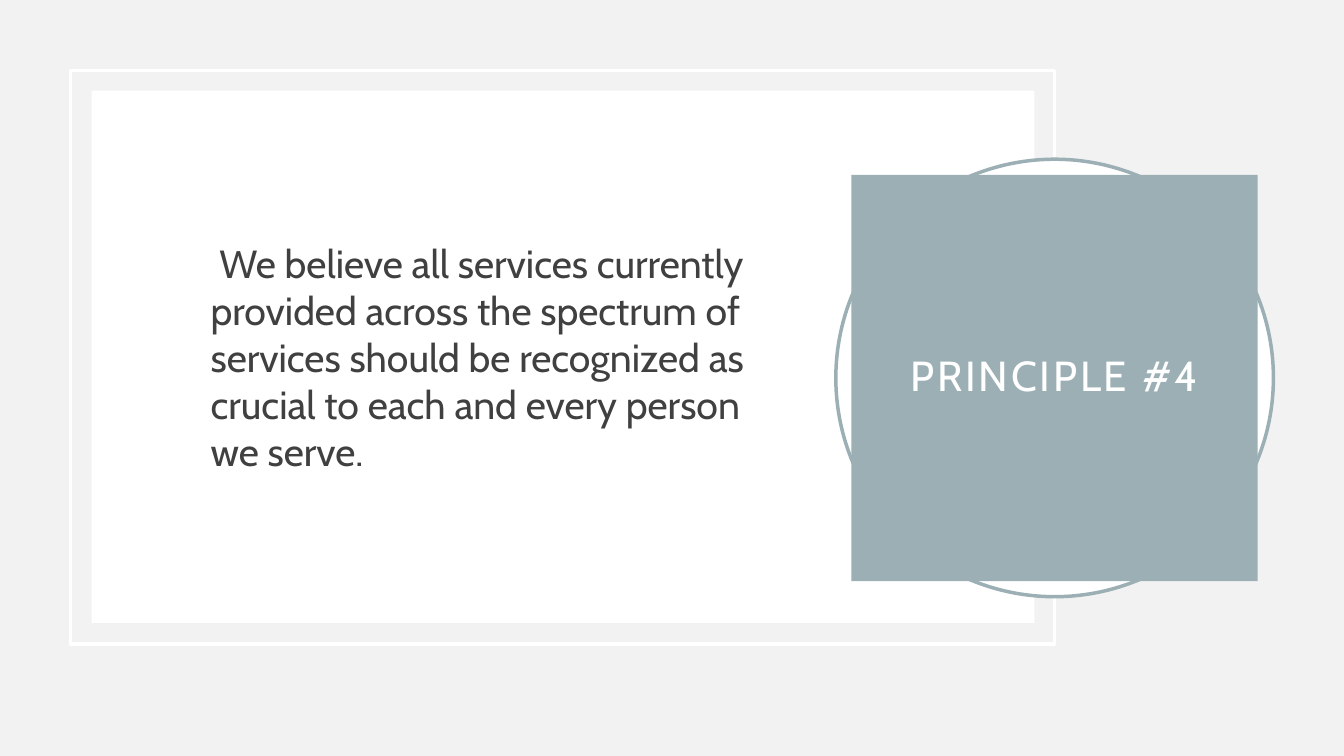
from pptx import Presentation
from pptx.dml.color import RGBColor
from pptx.enum.shapes import MSO_SHAPE
from pptx.enum.text import MSO_ANCHOR, PP_ALIGN
from pptx.util import Inches, Pt

RECT, OVAL = MSO_SHAPE.RECTANGLE, MSO_SHAPE.OVAL
MIDDLE = MSO_ANCHOR.MIDDLE
LEFT, CENTER = PP_ALIGN.LEFT, PP_ALIGN.CENTER

TITLE = "PRINCIPLE #4"
STATEMENT = (" We believe all services currently provided across the spectrum of "
             "services should be recognized as crucial to each and every person we serve.")
FONT = "Cabin"
PAGE, WHITE, TEAL, INK = "F2F2F2", "FFFFFF", "9BAFB5", "404040"

FRAME = (0.7, 0.7, 9.76, 5.69)
PANEL = (0.91, 0.9, 9.35, 5.28)
BODY = (1.44, 1.4, 6.25, 4.28)
BODY_INDENT = 0.55
BADGE_CENTER = (10.46, 3.75)
RING_SIZE, BADGE_SIZE = 4.34, 4.03
BADGE_INSET = 0.2


def rgb(value):
    return RGBColor.from_string(value)


def centered_square(size):
    """Box of the given size around the badge centre."""
    x, y = BADGE_CENTER
    return x - size / 2, y - size / 2, size, size


def add_block(slide, kind, box, fill=None, line=None):
    sp = slide.shapes.add_shape(kind, *map(Inches, box))
    sp.shadow.inherit = False
    if fill:
        sp.fill.solid()
        sp.fill.fore_color.rgb = rgb(fill)
    else:
        sp.fill.background()
    if line:
        sp.line.color.rgb = rgb(line)
        sp.line.width = Pt(2.5)
    else:
        sp.line.fill.background()
    return sp


def set_text(sp, text, size, color, align):
    """Fill a shape with one middle-anchored paragraph; return the paragraph."""
    tf = sp.text_frame
    tf.text = text
    tf.word_wrap = True
    tf.vertical_anchor = MIDDLE
    p = tf.paragraphs[0]
    p.alignment = align
    font = p.runs[0].font
    font.name, font.size = FONT, Pt(size)
    font.color.rgb = rgb(color)
    return p


def main():
    prs = Presentation()
    prs.slide_width, prs.slide_height = Inches(13.33), Inches(7.5)
    slide = prs.slides.add_slide(prs.slide_layouts[6])
    slide.background.fill.solid()
    slide.background.fill.fore_color.rgb = rgb(PAGE)

    add_block(slide, RECT, FRAME, line=WHITE)
    add_block(slide, RECT, PANEL, fill=WHITE)

    body = slide.shapes.add_textbox(*map(Inches, BODY))
    p = set_text(body, STATEMENT, 28, INK, LEFT)
    p.space_before = Pt(10)
    p_pr = p._p.get_or_add_pPr()
    p_pr.set("marL", str(Inches(BODY_INDENT)))
    p_pr.set("indent", "0")

    add_block(slide, OVAL, centered_square(RING_SIZE), WHITE, TEAL)
    badge = add_block(slide, RECT, centered_square(BADGE_SIZE), TEAL)
    p = set_text(badge, TITLE, 30, WHITE, CENTER)
    p.line_spacing = 0.9
    p.runs[0].font._element.set("spc", "200")
    tf = badge.text_frame
    tf.margin_left = tf.margin_right = Inches(BADGE_INSET)
    tf.margin_top = tf.margin_bottom = Inches(BADGE_INSET)

    prs.save("out.pptx")


if __name__ == "__main__":
    main()
